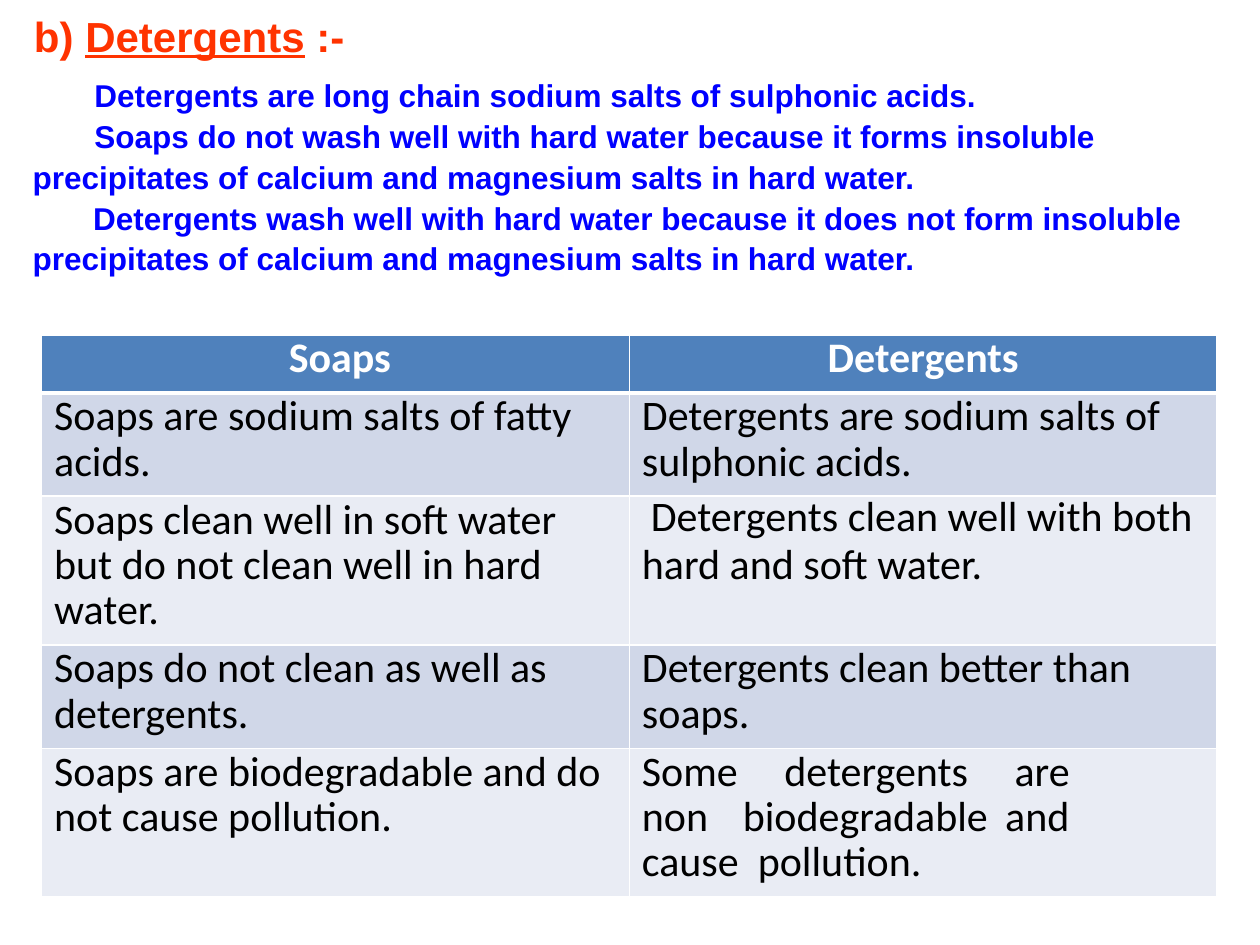
from pptx import Presentation
from pptx.dml.color import RGBColor
from pptx.enum.text import PP_ALIGN
from pptx.oxml.ns import qn
from pptx.util import Inches, Pt
from lxml import etree

LEFT, MID, FULL = PP_ALIGN.LEFT, PP_ALIGN.CENTER, PP_ALIGN.JUSTIFY
RED, NAVY = RGBColor(0xFF, 0x33, 0x00), RGBColor(0x00, 0x00, 0xFF)
WHITE, BLACK = RGBColor(0xFF, 0xFF, 0xFF), RGBColor(0, 0, 0)
BLUE = RGBColor(0x4F, 0x81, 0xBC)
BANDS = [RGBColor(0xD0, 0xD7, 0xE8), RGBColor(0xE9, 0xEC, 0xF4)]

# Content
TITLE = [("b) ", False), ("Detergents", True), (" :-", False)]
# text, left margin, first-line indent, space before, line spacing
BODY = [
    ("Detergents are long chain sodium salts of sulphonic acids.", 0.5, 0, 2.8, 1.0),
    ("Soaps do not wash well with hard water because it forms insoluble", 0.5, 0, 1.8, 1.0),
    ("precipitates of calcium and magnesium salts in hard water.", 0.01, 0, 1.9, 1.0),
    ("Detergents wash well with hard water because it does not form insoluble  "
     "precipitates of calcium and magnesium salts in hard water.", 0.01, 0.48, 0.1, 1.08),
]
HEADS = [("Soaps", 0.07), ("Detergents", 0)]
ROWS = [
    ("Soaps are sodium salts of fatty  acids.",
     "Detergents are sodium salts of  sulphonic acids."),
    ("Soaps clean well in soft water  but do not clean well in hard  water.",
     ["Detergents clean well with both", "hard and soft water."]),
    ("Soaps do not clean as well as  detergents.",
     "Detergents clean better than  soaps."),
    ("Soaps are biodegradable and do  not cause pollution.",
     "Some detergents are non  biodegradable and cause  pollution."),
]
HEIGHTS = [0.46, 0.82, 1.18, 0.82, 1.18]
RIGHT = {(2, 0): 0.3, (4, 1): 1.17}  # right margins that narrow a cell
ALIGN = {(4, 1): FULL}

TITLE_FONT = dict(name="Arial", size=Pt(24), bold=True)
BODY_FONT = dict(name="Arial", size=Pt(18), bold=True)
HEAD_FONT = dict(name="Calibri", size=Pt(24), bold=True)
CELL_FONT = dict(name="Calibri", size=Pt(24), bold=False)


def put(para, text, font, color, **more):
    run = para.add_run()
    run.text = text
    for key, val in {**font, **more}.items():
        setattr(run.font, key, val)
    run.font.color.rgb = color


def shape_para(para, margin, indent=0, **look):
    props = para._p.get_or_add_pPr()
    props.set("marL", str(Inches(margin)))
    props.set("indent", str(Inches(indent)))
    for key, val in look.items():
        setattr(para, key, val)


def paras(frame, count):
    return [frame.paragraphs[0]] + [frame.add_paragraph() for _ in range(count - 1)]


def add_box(slide, left, top, width, height, inset):
    frame = slide.shapes.add_textbox(*map(Inches, (left, top, width, height))).text_frame
    frame.word_wrap = True
    frame.margin_left = frame.margin_right = frame.margin_bottom = 0
    frame.margin_top = Inches(inset)
    return frame


def add_edges(cell, widths):
    props = cell._tc.get_or_add_tcPr()
    for side, width in zip("LRTB", widths):
        line = etree.SubElement(props, qn(f"a:ln{side}"), w=str(Pt(width)))
        fill = etree.SubElement(line, qn("a:solidFill"))
        etree.SubElement(fill, qn("a:srgbClr"), val=str(WHITE))


def style_cell(cell, color, widths, top, right):
    cell.margin_left = cell.margin_bottom = 0
    cell.margin_top, cell.margin_right = Inches(top), Inches(right)
    add_edges(cell, widths)
    cell.fill.solid()
    cell.fill.fore_color.rgb = color


def add_grid(slide):
    table = slide.shapes.add_table(
        len(HEIGHTS), 2, Inches(0.33), Inches(2.66),
        Inches(9.33), Inches(sum(HEIGHTS))).table
    table.horz_banding = False
    for row, height in zip(table.rows, HEIGHTS):
        row.height = Inches(height)

    # Header row
    for col, (text, margin) in enumerate(HEADS):
        cell = table.cell(0, col)
        style_cell(cell, BLUE, (1, 1, 1, 3), 0, 0)
        para = cell.text_frame.paragraphs[0]
        shape_para(para, margin, alignment=MID, line_spacing=Pt(28))
        put(para, text, HEAD_FONT, WHITE)

    # Comparison rows
    for r, row in enumerate(ROWS, 1):
        edges = (1, 1, 3 if r == 1 else 1.5 if r == 2 else 1, 1.5 if r == 1 else 1)
        for c, text in enumerate(row):
            cell, split = table.cell(r, c), isinstance(text, list)
            style_cell(cell, BANDS[(r - 1) % 2], edges,
                       0 if split else 0.03, RIGHT.get((r, c), 0))
            if split:
                specs = zip(text, (0.17, 0.1), (26.6, 27.4), (0, 0))
            else:
                specs = [(text, 0.1, 25.9, 2.5)]
            lines = paras(cell.text_frame, len(text) if split else 1)
            for para, (words, margin, pitch, gap) in zip(lines, specs):
                shape_para(para, margin, alignment=ALIGN.get((r, c), LEFT),
                           line_spacing=Pt(pitch), space_before=Pt(gap))
                put(para, words, CELL_FONT, BLACK)


def main():
    deck = Presentation()
    deck.slide_width, deck.slide_height = Inches(10), Inches(7.5)
    slide = deck.slides.add_slide(deck.slide_layouts[6])

    # Title
    para = add_box(slide, 0.26, 0.07, 2.49, 0.43, 0.01).paragraphs[0]
    shape_para(para, 0.01, space_before=Pt(1))
    for text, under in TITLE:
        put(para, text, TITLE_FONT, RED, underline=under)

    # Body text
    frame = add_box(slide, 0.25, 0.56, 9.2, 1.65, 0.04)
    for para, (text, margin, indent, gap, pitch) in zip(paras(frame, len(BODY)), BODY):
        shape_para(para, margin, indent, space_before=Pt(gap), line_spacing=pitch)
        put(para, text, BODY_FONT, NAVY)

    add_grid(slide)
    deck.save("out.pptx")


if __name__ == "__main__":
    main()
